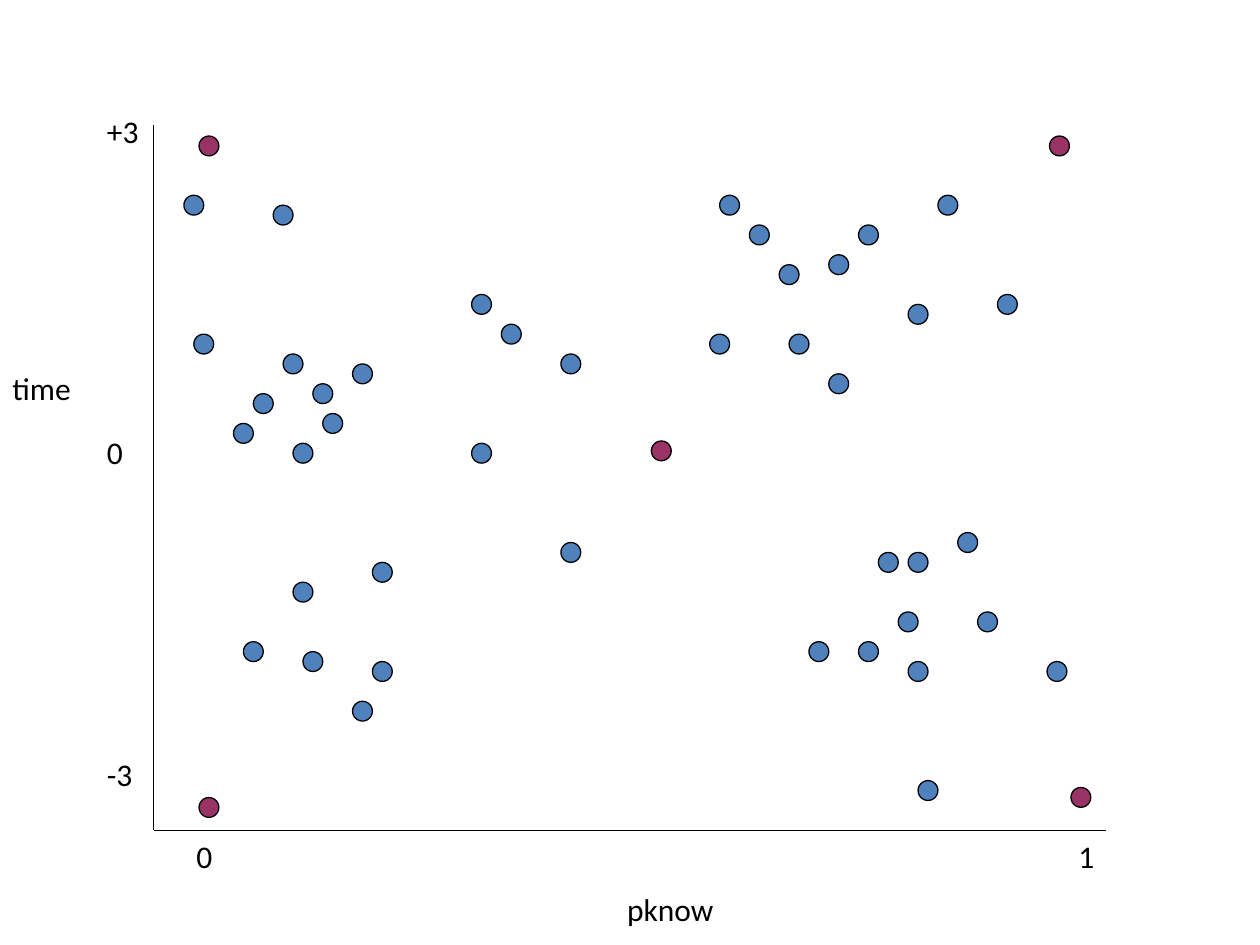
from dataclasses import dataclass

from lxml.etree import SubElement
from pptx import Presentation
from pptx.dml.color import RGBColor
from pptx.enum.shapes import MSO_CONNECTOR, MSO_SHAPE
from pptx.enum.text import PP_ALIGN
from pptx.oxml.ns import qn
from pptx.util import Inches, Mm, Pt


@dataclass(frozen=True)
class Theme:
    font: str = "Calibri"
    size: int = 18
    ink: str = "000000"
    data: str = "4F81BD"
    center: str = "993366"
    line: float = 0.75


THEME = Theme()

# Data dots sit on a 2 mm grid that starts at ORIGIN
STEP = Mm(2)
ORIGIN = Inches(1.46), Inches(1.55)
DOT = 2 * STEP

# (column, row) of each dot, by region of the plot
LOWER_RIGHT = [(78, 34), (73, 47), (72, 42), (68, 45), (70, 36), (73, 36),
               (74, 59), (80, 42), (87, 47), (63, 45)]
UPPER_RIGHT = [(54, 0), (57, 3), (53, 14), (61, 14), (73, 11), (60, 7),
               (68, 3), (65, 6), (65, 18), (76, 0), (82, 10)]
LOWER_LEFT = [(17, 51), (19, 47), (6, 45), (11, 39), (19, 37), (12, 46)]
UPPER_LEFT = [(13, 19), (10, 16), (5, 23), (7, 20), (11, 25), (17, 17),
              (9, 1), (0, 0), (14, 22), (1, 14)]
MIDDLE = [(29, 25), (38, 35), (38, 16), (29, 10), (32, 13)]

# Cluster centers lie off the grid: left and top in inches
CENTERS = [(1.58, 1.08), (8.33, 1.08), (8.5, 6.25), (1.58, 6.33), (5.17, 3.5)]

# Axes in inches
AXIS_X, AXIS_Y = 1.22, 6.59
AXIS_TOP, AXIS_RIGHT = 0.99, 8.78


def add_dot(s, left, top, color):
    sp = s.shapes.add_shape(MSO_SHAPE.OVAL, left, top, DOT, DOT)
    sp.shadow.inherit = False
    sp.fill.solid()
    sp.fill.fore_color.rgb = RGBColor.from_string(color)
    sp.line.color.rgb = RGBColor.from_string(THEME.ink)
    sp.line.width = Pt(THEME.line)


def add_axis(s, x1, y1, x2, y2):
    cx = s.shapes.add_connector(MSO_CONNECTOR.STRAIGHT,
                                *(Inches(v) for v in (x1, y1, x2, y2)))
    cx.line.color.rgb = RGBColor.from_string(THEME.ink)
    cx.line.width = Pt(THEME.line)
    SubElement(cx.element.spPr, qn("a:effectLst"))


def add_label(s, box, lines, gap=0):
    """Add a text box with one paragraph per line, gap points apart."""
    tf = s.shapes.add_textbox(*(Inches(v) for v in box)).text_frame
    tf.word_wrap = True
    for i, text in enumerate(lines):
        p = tf.add_paragraph() if i else tf.paragraphs[0]
        p.space_before = Pt(gap if i else 0)
        r = p.add_run()
        r.text = text
        r.font.name = THEME.font
        r.font.size = Pt(THEME.size)
        r.font.color.rgb = RGBColor.from_string(THEME.ink)
    return tf


def add_tab_stop(p, inches):
    tabs = SubElement(p._p.get_or_add_pPr(), qn("a:tabLst"))
    SubElement(tabs, qn("a:tab"), pos=str(Inches(inches)), algn="l")


def main():
    prs = Presentation()
    prs.slide_width, prs.slide_height = Inches(10), Inches(7.5)
    s = prs.slides.add_slide(prs.slide_layouts[6])

    # Horizontal scale and title, vertical title, vertical scale
    tf = add_label(s, (1.46, AXIS_Y, 7.72, 0.85), ["0\t1", "pknow"], gap=9)
    add_tab_stop(tf.paragraphs[0], 7)
    tf.paragraphs[1].alignment = PP_ALIGN.CENTER
    add_label(s, (0, 2.88, 0.83, 0.4), ["time"])
    add_label(s, (0.75, 0.84, 0.63, 5.82), ["+3", "0", "-3"], gap=162)

    # Axes
    add_axis(s, AXIS_X, AXIS_TOP, AXIS_X, AXIS_Y)
    add_axis(s, AXIS_X, AXIS_Y, AXIS_RIGHT, AXIS_Y)

    # Data dots
    x0, y0 = ORIGIN
    for region in (LOWER_RIGHT, UPPER_RIGHT, LOWER_LEFT, UPPER_LEFT, MIDDLE):
        for col, row in region:
            add_dot(s, x0 + col * STEP, y0 + row * STEP, THEME.data)

    # Cluster centers
    for left, top in CENTERS:
        add_dot(s, Inches(left), Inches(top), THEME.center)

    prs.save("out.pptx")


if __name__ == "__main__":
    main()
